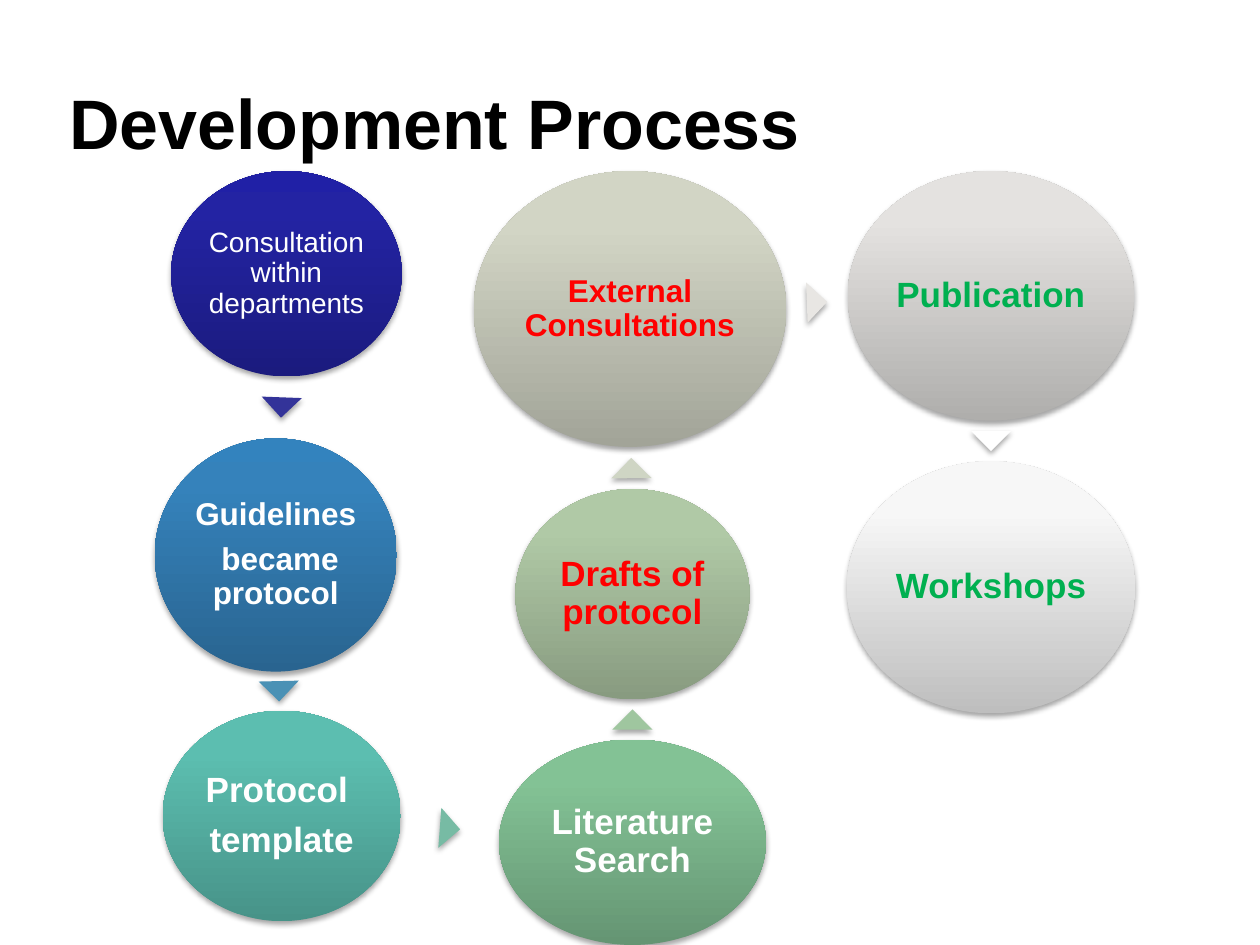
from dataclasses import dataclass
from math import atan2, degrees, hypot

from lxml.etree import SubElement
from pptx import Presentation
from pptx.dml.color import RGBColor as Rgb
from pptx.enum.shapes import MSO_SHAPE as Preset
from pptx.enum.text import MSO_ANCHOR as Anchor, PP_ALIGN as Align
from pptx.oxml.ns import qn
from pptx.util import Cm, Pt


@dataclass(frozen=True)
class Theme:
    font: str = "Arial"
    title: str = "000000"
    white: str = "FFFFFF"
    red: str = "FF0000"
    green: str = "00B050"
    shadow: str = "000000"
    title_size: int = 40
    small: int = 16
    medium: int = 18
    large: int = 20


@dataclass(frozen=True)
class Step:
    """A stage of the process; lengths in cm, shades from bottom to top."""
    lines: tuple[str, ...]
    left: float
    top: float
    width: float
    height: float
    shades: tuple[str, str, str]
    ink: str
    size: int
    bold: bool = True

    @property
    def center(self) -> tuple[float, float]:
        return self.left + self.width / 2, self.top + self.height / 2


THEME = Theme()
ARROW_WIDTH, ARROW_HEIGHT = 0.81, 0.41
STEPS = (
    Step(("Consultation within departments",), 3.45, 3.45, 4.65, 4.14,
         ("1B1B7E", "2323A3", "2020A6"), THEME.white, THEME.small, bold=False),
    Step(("Guidelines", " became protocol"), 3.12, 8.84, 4.88, 4.7,
         ("296490", "3582BB", "3383BE"), THEME.white, THEME.medium),
    Step(("Protocol ", "template"), 3.28, 14.33, 4.8, 4.24,
         ("479388", "5CBEB0", "5BC1B2"), THEME.white, THEME.large),
    Step(("Literature Search",), 10.06, 14.91, 5.38, 4.14,
         ("659573", "83C295", "82C495"), THEME.white, THEME.large),
    Step(("Drafts of protocol",), 10.39, 9.86, 4.72, 4.24,
         ("889B80", "B0C9A6", "B0CBA6"), THEME.red, THEME.large),
    Step(("External Consultations",), 9.55, 3.45, 6.3, 5.56,
         ("A2A498", "D2D5C5", "D4D6C5"), THEME.red, THEME.medium),
    Step(("Publication",), 17.09, 3.45, 5.77, 5.03,
         ("AFAEAC", "E4E2E0", "E5E3E1"), THEME.green, THEME.large),
    Step(("Workshops",), 17.07, 9.3, 5.82, 5.08,
         ("BEBEBE", "F7F7F7", "F8F8F8"), THEME.green, THEME.large),
)
ARROW_COLORS = ("333399", "4A91B5", "77BBA4", "9FC69F", "CFD5C4", "E8E6E3", "FFFFFF")


def add_run(paragraph, text: str, size: int, color: str, bold: bool) -> None:
    run = paragraph.add_run()
    run.text = text
    run.font.name = THEME.font
    run.font.size = Pt(size)
    run.font.bold = bold
    run.font.color.rgb = Rgb.from_string(color)


def add_shadow(shape) -> None:
    """Drop the outline and cast a soft shadow straight down."""
    shape.line.fill.background()
    shape.shadow.inherit = False
    effects = shape._element.spPr.find(qn("a:effectLst"))
    outer = SubElement(effects, qn("a:outerShdw"), blurRad=str(Pt(3.1)),
                       dist=str(Pt(1.8)), dir="5400000", rotWithShape="0")
    color = SubElement(outer, qn("a:srgbClr"), val=THEME.shadow)
    SubElement(color, qn("a:alpha"), val="35000")


def fill_upwards(shape, shades: tuple[str, str, str]) -> None:
    gradient = SubElement(shape._element.spPr, qn("a:gradFill"), rotWithShape="1")
    stops = SubElement(gradient, qn("a:gsLst"))
    for percent, shade in zip((0, 80, 100), shades):
        stop = SubElement(stops, qn("a:gs"), pos=str(percent * 1000))
        SubElement(stop, qn("a:srgbClr"), val=shade)
    SubElement(gradient, qn("a:lin"), ang="16200000", scaled="0")


def draw_step(slide, step: Step) -> None:
    circle = slide.shapes.add_shape(Preset.OVAL, Cm(step.left), Cm(step.top),
                                    Cm(step.width), Cm(step.height))
    fill_upwards(circle, step.shades)
    add_shadow(circle)
    frame = circle.text_frame
    frame.word_wrap = True
    frame.vertical_anchor = Anchor.MIDDLE
    frame.margin_left = frame.margin_right = Cm(0.07)
    frame.margin_top = frame.margin_bottom = Cm(0.07)
    for index, line in enumerate(step.lines):
        paragraph = frame.add_paragraph() if index else frame.paragraphs[0]
        paragraph.alignment = Align.CENTER
        paragraph.line_spacing = 0.9
        paragraph.space_after = Pt(step.size * 0.35)
        add_run(paragraph, line, step.size, step.ink, step.bold)


def draw_arrow(slide, start: Step, end: Step, color: str) -> None:
    """Centre a triangle in the gap between two steps, pointing at the second."""
    (x1, y1), (x2, y2) = start.center, end.center
    dx, dy = x2 - x1, y2 - y1
    if abs(dx) > abs(dy):
        reach_difference = (start.width - end.width) / 2
    else:
        reach_difference = (start.height - end.height) / 2
    share = (1 + reach_difference / hypot(dx, dy)) / 2
    arrow = slide.shapes.add_shape(
        Preset.ISOSCELES_TRIANGLE,
        Cm(x1 + share * dx - ARROW_WIDTH / 2), Cm(y1 + share * dy - ARROW_HEIGHT / 2),
        Cm(ARROW_WIDTH), Cm(ARROW_HEIGHT))
    arrow.rotation = degrees(atan2(dx, -dy)) % 360
    arrow.fill.solid()
    arrow.fill.fore_color.rgb = Rgb.from_string(color)
    add_shadow(arrow)


def draw_title(slide, text: str) -> None:
    title = slide.shapes.title
    title.left, title.top, title.width, title.height = Cm(1.14), Cm(0.86), Cm(22.86), Cm(3.18)
    title.text_frame.vertical_anchor = Anchor.MIDDLE
    paragraph = title.text_frame.paragraphs[0]
    paragraph.alignment = Align.LEFT
    add_run(paragraph, text, THEME.title_size, THEME.title, bold=True)


def main() -> None:
    deck = Presentation()
    deck.slide_width, deck.slide_height = Cm(25.4), Cm(19.05)
    slide = deck.slides.add_slide(deck.slide_layouts[5])
    draw_title(slide, "Development Process")

    # Stages of the process
    for step in STEPS:
        draw_step(slide, step)

    # Arrows from each stage to the next
    for start, end, color in zip(STEPS, STEPS[1:], ARROW_COLORS):
        draw_arrow(slide, start, end, color)

    deck.save("out.pptx")


if __name__ == "__main__":
    main()
